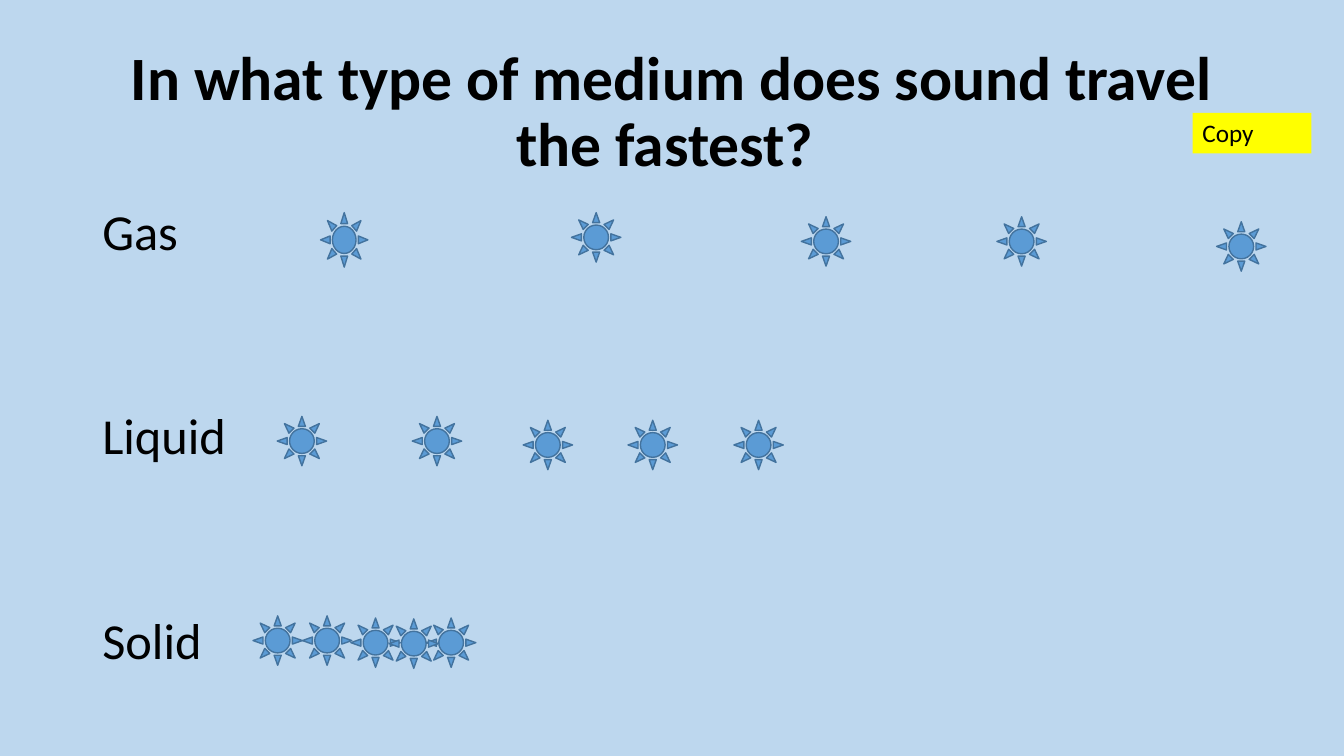
from pptx import Presentation
from pptx.dml.color import RGBColor
from pptx.enum.shapes import MSO_SHAPE
from pptx.enum.text import MSO_ANCHOR, MSO_AUTO_SIZE, PP_ALIGN
from pptx.util import Pt

COLORS = {"sky": "BDD7EE", "particle": "5B9BD5", "outline": "43739E",
          "tag": "FFFF00", "text": "000000"}


def color(name):
    return RGBColor.from_string(COLORS[name])


def add_text(paragraph, text, size, bold=False):
    run = paragraph.add_run()
    run.text = text
    run.font.name = "Calibri"
    run.font.size = Pt(size)
    run.font.bold = bold
    run.font.color.rgb = color("text")


prs = Presentation()
prs.slide_width = Pt(960)
prs.slide_height = Pt(540)
slide = prs.slides.add_slide(prs.slide_layouts[5])
slide.background.fill.solid()
slide.background.fill.fore_color.rgb = color("sky")

question = slide.shapes.title
question.left, question.top = Pt(66), Pt(28.8)
question.width, question.height = Pt(828), Pt(104.4)
question_frame = question.text_frame
question_frame.word_wrap = True
question_frame.auto_size = MSO_AUTO_SIZE.NONE
question_frame.vertical_anchor = MSO_ANCHOR.MIDDLE
question_line = question_frame.paragraphs[0]
question_line.alignment = PP_ALIGN.CENTER
question_line.line_spacing = 0.9
add_text(question_line, "In what type of medium does sound travel the fastest? ", 44, True)

media = slide.shapes.add_textbox(Pt(66), Pt(144), Pt(828), Pt(342.7)).text_frame
media.word_wrap = True
for index, medium in enumerate(["Gas", "Liquid", "Solid"]):
    label = media.paragraphs[0] if index == 0 else media.add_paragraph()
    label.line_spacing = 0.9
    if index:
        label.space_before = Pt(107.3)
    add_text(label, medium, 36)

SIZE = 35.3
gas = [(229, 151.9, 33.8, 38.9), (408.2, 151.9, SIZE, SIZE), (572.4, 154.8, SIZE, SIZE),
       (712.1, 154.8, SIZE, SIZE), (869, 158.4, SIZE, SIZE)]
liquid = [(294.5, 297.4, SIZE, SIZE), (198, 297.4, SIZE, SIZE), (373.7, 300.2, SIZE, SIZE),
          (448.6, 300.2, SIZE, SIZE), (524.2, 300.2, SIZE, SIZE)]
solid = [(250.6, 441.4, SIZE, SIZE), (216, 439.9, SIZE, SIZE), (180.7, 439.9, SIZE, SIZE),
         (304.6, 441.4, SIZE, SIZE), (277.9, 442.1, SIZE, SIZE)]
for bounds in gas + liquid + solid:
    particle = slide.shapes.add_shape(MSO_SHAPE.SUN, *[Pt(length) for length in bounds])
    particle.shadow.inherit = False
    particle.fill.solid()
    particle.fill.fore_color.rgb = color("particle")
    particle.line.color.rgb = color("outline")
    particle.line.width = Pt(1)

copy_tag = slide.shapes.add_textbox(Pt(851.8), Pt(80.6), Pt(85), Pt(29))
copy_tag.fill.solid()
copy_tag.fill.fore_color.rgb = color("tag")
copy_tag.text_frame.word_wrap = True
copy_tag.text_frame.auto_size = MSO_AUTO_SIZE.SHAPE_TO_FIT_TEXT
add_text(copy_tag.text_frame.paragraphs[0], "Copy", 18)

prs.save("out.pptx")
